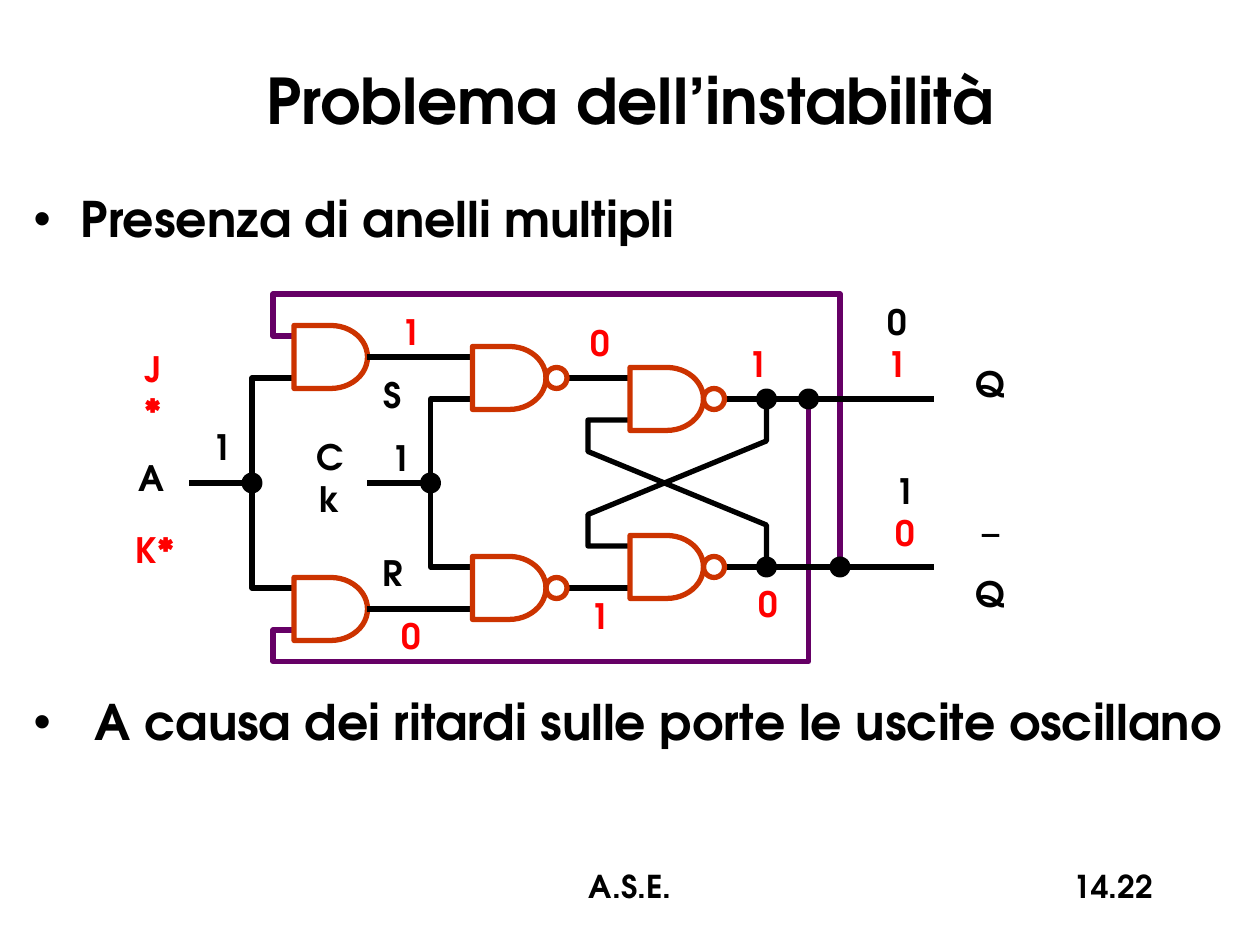
from pptx import Presentation
from pptx.dml.color import RGBColor
from pptx.enum.shapes import MSO_CONNECTOR as CONN, MSO_SHAPE as SHAPE
from pptx.enum.text import MSO_ANCHOR as ANCHOR, MSO_AUTO_SIZE as FIT, PP_ALIGN as ALIGN
from pptx.oxml.ns import qn
from pptx.util import Pt

PX = 7620
FONT = "TeX Gyre Adventor"
COLORS = {"ink": "000000", "new": "FF0000", "gate": "CC3300", "loop": "660066"}

TITLE = "Problema dell’instabilità"
BULLETS = [
    ("Presenza di anelli multipli", 6),
    (" A causa dei ritardi sulle porte le uscite oscillano", 257),
]
FOOTERS = [
    ("A.S.E.", (410, 820, 380, 60), ALIGN.CENTER),
    ("14.22", (860, 820, 250, 60), ALIGN.RIGHT),
]

AND_GATES = [(280, 310), (280, 550)]
NAND_GATES = [(450, 330), (450, 530), (600, 350), (600, 510)]
GATE_W, GATE_H, DOT = 70, 60, 20
JUNCTIONS = [(240, 460), (410, 460), (730, 380), (770, 380), (730, 540), (800, 540)]

WIRES = [
    ((180, 460), (240, 460)), ((350, 460), (410, 460)),
    ((540, 360), (600, 360)), ((540, 560), (600, 560)),
    ((690, 380), (730, 380)), ((730, 380), (890, 380)),
    ((690, 540), (730, 540)), ((730, 540), (890, 540)),
]
AND_OUTPUTS = [(450, 340), (450, 580)]
BENT_WIRES = [
    ("ink", [(280, 360), (240, 360), (240, 560), (280, 560)]),
    ("ink", [(450, 380), (410, 380), (410, 540), (450, 540)]),
    ("ink", [(600, 400), (560, 400), (560, 430), (730, 500), (730, 540)]),
    ("ink", [(600, 520), (560, 520), (560, 490), (730, 420), (730, 380)]),
    ("loop", [(770, 380), (770, 630), (260, 630), (260, 600), (280, 600)]),
    ("loop", [(800, 540), (800, 280), (260, 280), (260, 320), (280, 320)]),
]

LABEL_W, LINE_H, LABEL_PAD = 54, 40, 12
LABELS = [
    ([("A", "ink")], 144, 455, LABEL_W),
    ([("Ck", "ink")], 314, 455, 68),
    ([("S", "ink")], 374, 376, LABEL_W),
    ([("R", "ink")], 374, 545, LABEL_W),
    ([("Q", "ink")], 943, 365, LABEL_W),
    ([("‾Q", "ink")], 943, 545, 67),
    ([("J*", "new")], 145, 371, 55),
    ([("K*", "new")], 148, 523, 62),
    ([("1", "ink")], 212, 425, LABEL_W),
    ([("1", "ink")], 382, 436, LABEL_W),
    ([("1", "new")], 392, 316, LABEL_W),
    ([("0", "new")], 392, 605, LABEL_W),
    ([("0", "new")], 572, 326, LABEL_W),
    ([("1", "new")], 572, 586, LABEL_W),
    ([("1", "new")], 722, 346, LABEL_W),
    ([("0", "new")], 732, 575, LABEL_W),
    ([("0", "ink"), ("1", "new")], 855, 326, LABEL_W),
    ([("1", "ink"), ("0", "new")], 862, 487, LABEL_W),
]


def emu(*lengths):
    return [length * PX for length in lengths]


def rgb(color):
    return RGBColor.from_string(COLORS[color])


def write(paragraph, text, size, color="ink", **layout):
    run = paragraph.add_run()
    run.text = text
    for key, value in {"name": FONT, "size": Pt(size), "bold": True}.items():
        setattr(run.font, key, value)
    run.font.color.rgb = rgb(color)
    for key, value in layout.items():
        setattr(paragraph, key, value)


def place(placeholder, box, anchor):
    for key, value in zip(("left", "top", "width", "height"), emu(*box)):
        setattr(placeholder, key, value)
    frame = placeholder.text_frame
    for key, value in {"auto_size": FIT.NONE, "word_wrap": True, "vertical_anchor": anchor}.items():
        setattr(frame, key, value)
    return frame


def stroke(line, color):
    line.color.rgb = rgb(color)
    line.width = Pt(3)


def outline(kind, box, color):
    shape = shapes.add_shape(kind, *emu(*box))
    shape.shadow.inherit = False
    shape.fill.background()
    stroke(shape.line, color)
    return shape


def wire(start, end):
    line = shapes.add_connector(CONN.STRAIGHT, *emu(*start, *end))
    stroke(line.line, "ink")
    properties = line._element.spPr
    properties.append(properties.makeelement(qn("a:effectLst"), {}))
    return line


deck = Presentation()
deck.slide_width, deck.slide_height = emu(1200, 900)
slide = deck.slides.add_slide(deck.slide_layouts[1])
shapes = slide.shapes

heading = place(shapes.title, (20, 20, 1160, 150), ANCHOR.MIDDLE)
write(heading.paragraphs[0], TITLE, 36, alignment=ALIGN.CENTER)

body = place(slide.placeholders[1], (20, 180, 1160, 620), ANCHOR.TOP)
for index, (text, gap) in enumerate(BULLETS):
    bullet = body.add_paragraph() if index else body.paragraphs[0]
    write(bullet, text, 28, line_spacing=0.9, space_before=Pt(gap))
    indents = bullet._p.get_or_add_pPr()
    indents.set("marL", str(45 * PX))
    indents.set("indent", str(-45 * PX))

for points in (path_points for path_points in BENT_WIRES):
    color, corners = points
    builder = shapes.build_freeform(*corners[0], scale=PX)
    builder.add_line_segments(corners[1:], close=False)
    bent = builder.convert_to_shape()
    bent.shadow.inherit = False
    bent.fill.background()
    stroke(bent.line, color)

for start, end in WIRES:
    wire(start, end)

for (x, y), target in zip(AND_GATES, AND_OUTPUTS):
    gate = outline(SHAPE.FLOWCHART_DELAY, (x, y, GATE_W, GATE_H), "gate")
    wire((x + GATE_W, y + GATE_H // 2), target).begin_connect(gate, 3)

for x, y in NAND_GATES:
    outline(SHAPE.FLOWCHART_DELAY, (x, y, GATE_W, GATE_H), "gate")
    outline(SHAPE.OVAL, (x + GATE_W, y + (GATE_H - DOT) // 2, DOT, DOT), "gate")

for x, y in JUNCTIONS:
    junction = outline(SHAPE.OVAL, (x - DOT // 2, y - DOT // 2, DOT, DOT), "ink")
    junction.fill.solid()
    junction.fill.fore_color.rgb = rgb("ink")
    junction.line.fill.background()

for lines, x, y, width in LABELS:
    height = len(lines) * LINE_H + LABEL_PAD
    box = (x - width // 2, y - height // 2, width, height)
    label = place(shapes.add_textbox(0, 0, 0, 0), box, ANCHOR.MIDDLE)
    for index, (text, color) in enumerate(lines):
        row = label.add_paragraph() if index else label.paragraphs[0]
        write(row, text, 20, color, alignment=ALIGN.CENTER)

for text, box, alignment in FOOTERS:
    footer = place(shapes.add_textbox(0, 0, 0, 0), box, ANCHOR.TOP)
    write(footer.paragraphs[0], text, 18, alignment=alignment)

deck.save("out.pptx")
